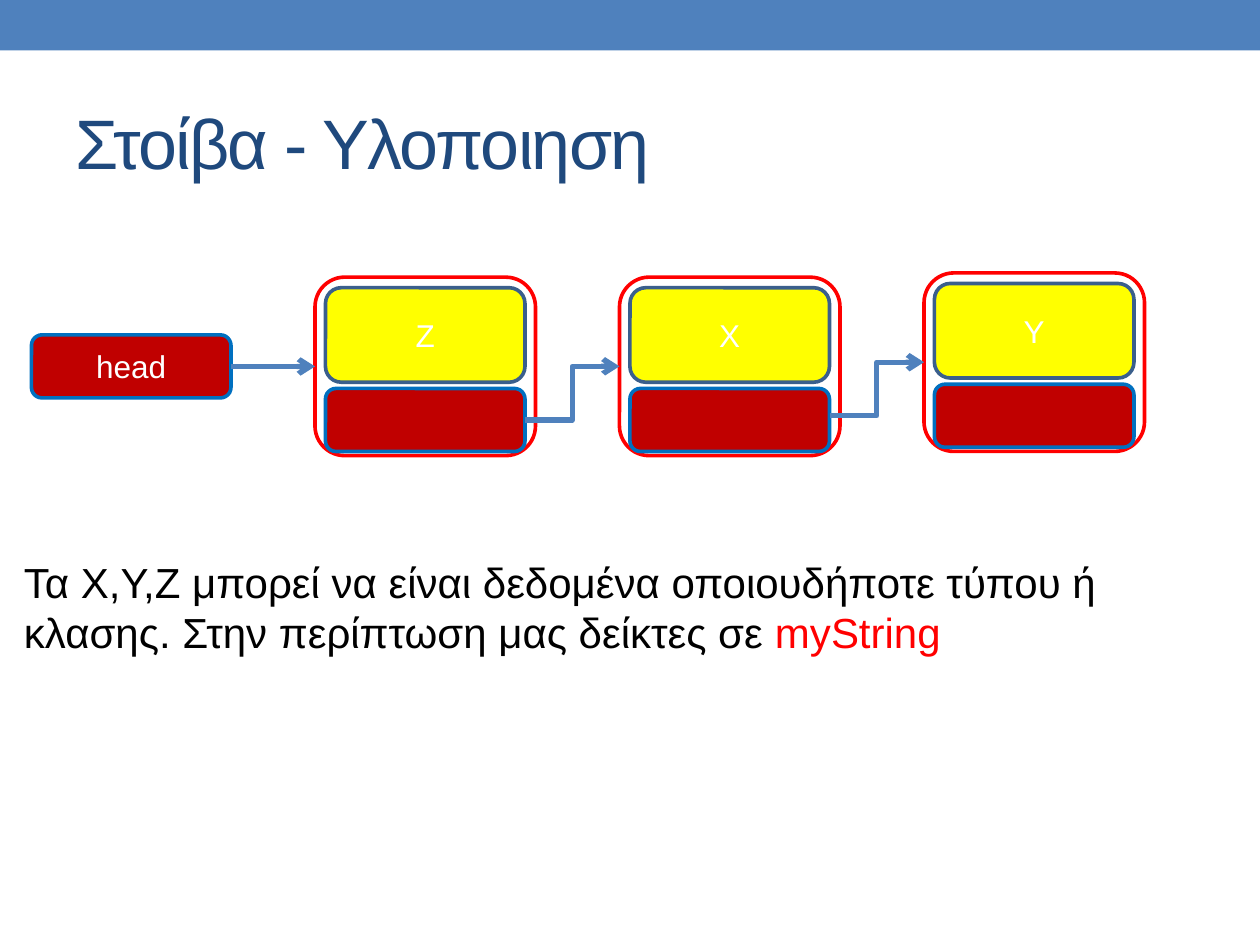
from lxml.etree import SubElement as Sub
from pptx import Presentation
from pptx.dml.color import RGBColor as Rgb
from pptx.enum.shapes import MSO_CONNECTOR as Link, MSO_SHAPE as Kind
from pptx.enum.text import MSO_ANCHOR as Anchor, PP_ALIGN as Align
from pptx.oxml.ns import qn
from pptx.util import Pt

PX = 7620  # EMU per px, 120 px to the inch
HUE = {
    "bar": "4F81BD", "title": "1F497D", "text": "000000", "white": "FFFFFF",
    "frame": "FF0000", "data": "FFFF00", "rim": "3A5F8C",
    "link": "C00000", "edge": "0070C0",
}


def tint(name):
    return Rgb.from_string(HUE[name])


def write(frame, *runs, size=18, align=Align.LEFT, anchor=Anchor.TOP, track=0):
    """Fill a text frame with one paragraph of (text, colour) runs."""
    frame.word_wrap = True
    frame.vertical_anchor = anchor
    para = frame.paragraphs[0]
    para.alignment = align
    for text, hue in runs:
        run = para.add_run()
        run.text = text
        run.font.name = "Arial"
        run.font.size = Pt(size)
        run.font.color.rgb = tint(hue)
        if track:
            run.font._element.set("spc", str(track))


class Deck:
    font = 18
    rim = Pt(2.08)
    wire = Pt(3)

    def __init__(self, wide, high):
        self.prs = Presentation()
        self.prs.slide_width = wide * PX
        self.prs.slide_height = high * PX
        self.slide = self.prs.slides.add_slide(self.prs.slide_layouts[6])

    def box(self, x, y, w, h, fill=None, line=None, text=None,
            kind=Kind.ROUNDED_RECTANGLE, into=None):
        shapes = (into or self.slide).shapes
        shape = shapes.add_shape(kind, x * PX, y * PX, w * PX, h * PX)
        shape.shadow.inherit = False
        if fill:
            shape.fill.solid()
            shape.fill.fore_color.rgb = tint(fill)
        else:
            shape.fill.background()
        if line:
            shape.line.color.rgb = tint(line)
            shape.line.width = self.rim
        else:
            shape.line.fill.background()
        if text:
            write(shape.text_frame, (text, "white"), size=self.font,
                  align=Align.CENTER, anchor=Anchor.MIDDLE)
        return shape

    def node(self, x, y, text):
        """Draw a list node: a frame round a link cell and a data cell."""
        group = self.slide.shapes.add_group_shape()
        frame = self.box(x, y, 210, 170, line="frame", into=group)
        self.box(x + 10, y + 106, 190, 60, "link", "edge", into=group)
        self.box(x + 10, y + 10, 190, 90, "data", "rim", text, into=group)
        return frame

    def arrow(self, x1, y1, x2, y2, kind=Link.STRAIGHT):
        line = self.slide.shapes.add_connector(
            kind, x1 * PX, y1 * PX, x2 * PX, y2 * PX)
        line.line.color.rgb = tint("bar")
        line.line.width = self.wire
        Sub(line.line._get_or_add_ln(), qn("a:tailEnd"), type="arrow")
        Sub(line._element.spPr, qn("a:effectLst"))
        return line

    def label(self, x, y, w, h, *runs, **style):
        area = self.slide.shapes.add_textbox(x * PX, y * PX, w * PX, h * PX)
        write(area.text_frame, *runs, **style)


def main():
    deck = Deck(1200, 900)

    # Top bar and title
    deck.box(0, 0, 1200, 48, "bar", kind=Kind.RECTANGLE)
    deck.label(60, 70, 1080, 130, ("Στοίβα - Υλοποιηση", "title"),
               size=40, anchor=Anchor.MIDDLE, track=-100)

    # Stack nodes, at an equal step
    left, step = 300, 290
    tops = (264, 264, 260)
    nodes = [deck.node(left + i * step, top, text)
             for i, (top, text) in enumerate(zip(tops, "ZXY"))]

    # Elbow arrows from each link cell to the next node
    for i, top in enumerate(tops[1:]):
        x, y = left + i * step + 200, top + 85
        deck.arrow(x, y + 51, x + 90, y, Link.ELBOW)

    # Head pointer
    head = deck.box(30, 319, 190, 60, "link", "edge", "head")
    line = deck.arrow(220, 349, left, 349)
    line.begin_connect(head, 3)
    line.end_connect(nodes[0], 1)

    # Note
    deck.label(11, 524, 1190, 109,
               ("Τα Χ,Υ,Ζ μπορεί να είναι δεδομένα οποιουδήποτε τύπου ή κλασης. "
                "Στην περίπτωση μας δείκτες σε ", "text"),
               ("myString", "frame"), size=24)

    deck.prs.save("out.pptx")


if __name__ == "__main__":
    main()
